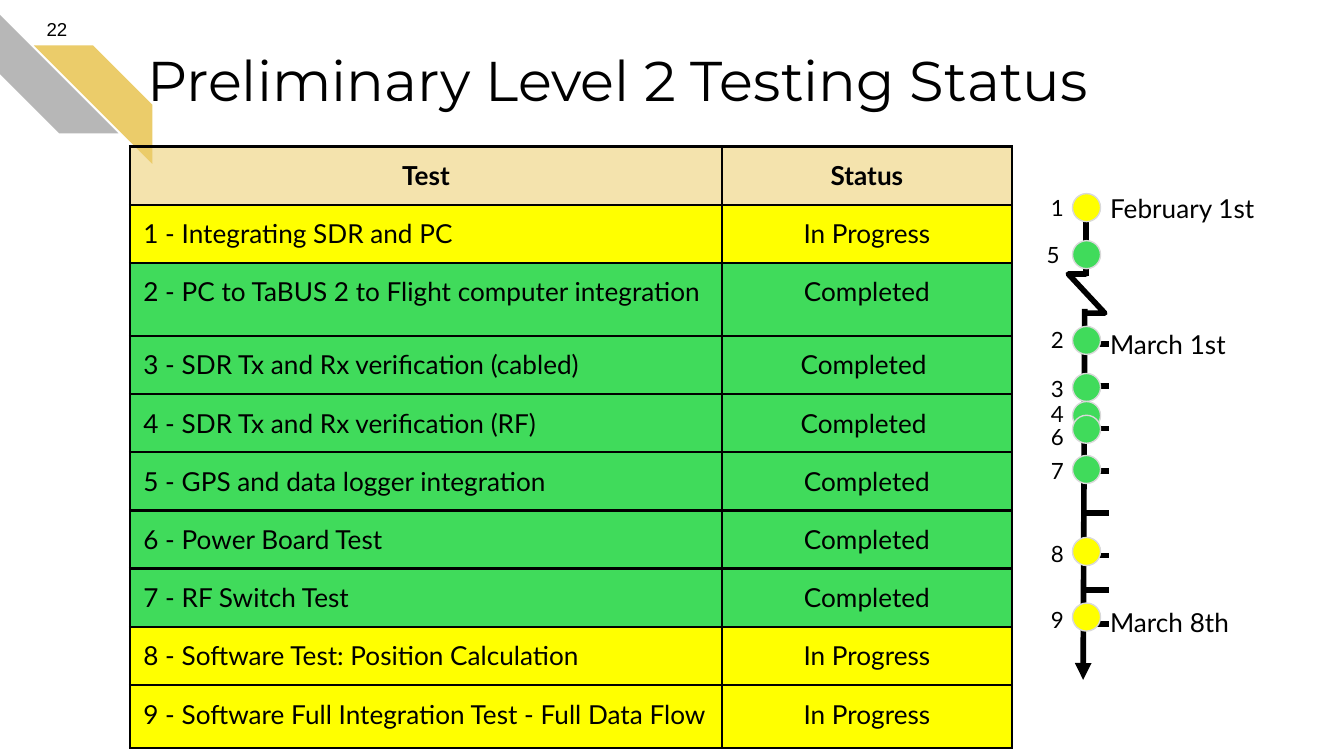
from dataclasses import dataclass

from lxml.etree import SubElement
from pptx import Presentation
from pptx.dml.color import RGBColor
from pptx.enum.shapes import MSO_CONNECTOR, MSO_SHAPE
from pptx.enum.text import MSO_ANCHOR, PP_ALIGN
from pptx.oxml.ns import qn
from pptx.util import Cm, Pt


@dataclass(frozen=True)
class Theme:
    black: str = "000000"
    gray: str = "B7B7B7"
    gold: str = "EBCC6A"
    done: str = "40DB5B"
    active: str = "FFFF00"
    dot_edge: str = "D9D9D9"
    header_alpha: int = 55000
    title_font: str = "Montserrat"
    body_font: str = "Lato"
    page_font: str = "Arial"
    title_size: int = 30
    body_size: int = 14
    label_size: int = 12
    page_size: int = 10
    border_width: float = 1.5
    axis_width: float = 3
    inset: float = 0.25


THEME = Theme()
STATUS_FILLS = {"Completed": THEME.done, "In Progress": THEME.active}

TESTS = [
    ("1 - Integrating SDR and PC", "In Progress"),
    ("2 - PC to TaBUS 2 to Flight computer integration", "Completed"),
    ("3 - SDR Tx and Rx verification (cabled)", "Completed "),
    ("4 - SDR Tx and Rx verification (RF)", "Completed "),
    ("5 - GPS and data logger integration", "Completed"),
    ("6 - Power Board Test", "Completed"),
    ("7 - RF Switch Test", "Completed"),
    ("8 - Software Test: Position Calculation", "In Progress"),
    ("9 - Software Full Integration Test - Full Data Flow", "In Progress"),
]
COLUMN_WIDTHS = [11.18, 5.49]
ROW_HEIGHTS = [1.1, 1.1, 1.38] + [1.1] * 6 + [1.19]

MILESTONES = [
    ("1", 3.66, 19.61, 3.61),
    ("5", 4.55, 19.53, 4.5),
    ("2", 6.17, 19.61, 6.12),
    ("3", 7.06, 19.61, 7.04),
    ("4", 7.59, 19.61, 7.52),
    ("6", 7.85, 19.61, 7.95),
    ("7", 8.61, 19.61, 8.59),
    ("8", 10.16, 19.61, 10.16),
    ("9", 11.4, 19.61, 11.4),
]
DATES = [
    ("February 1st", 3.53, 3.51, 0.79),
    ("March 1st", 6.2, 3.15, 0.61),
    ("March 8th", 11.46, 3, 0.61),
]
TICKS = [6.5 + 0.8 * day for day in range(6)] + [11.15, 11.79]
BREAK_POINTS = [(20.52, 5.92), (20.88, 5.92), (20.19, 5.18), (20.52, 5.18), (20.52, 5.16)]


def color(value):
    return RGBColor.from_string(value)


def format_text(frame, text, font, size, align=PP_ALIGN.LEFT, bold=False):
    frame.text = text
    para = frame.paragraphs[0]
    para.alignment = align
    for span in para.runs:
        span.font.name = font
        span.font.size = Pt(size)
        span.font.bold = bold
        span.font.color.rgb = color(THEME.black)


def set_margins(holder):
    for side in ("left", "top", "right", "bottom"):
        setattr(holder, f"margin_{side}", Cm(THEME.inset))


def add_text(page, text, left, top, width, height, font, size,
             align=PP_ALIGN.LEFT, anchor=MSO_ANCHOR.MIDDLE):
    box = page.shapes.add_textbox(Cm(left), Cm(top), Cm(width), Cm(height))
    frame = box.text_frame
    frame.word_wrap = True
    frame.vertical_anchor = anchor
    set_margins(frame)
    format_text(frame, text, font, size, align)


def add_shape(page, kind, left, top, size, fill):
    shape = page.shapes.add_shape(kind, Cm(left), Cm(top), Cm(size), Cm(size))
    shape.shadow.inherit = False
    shape.fill.solid()
    shape.fill.fore_color.rgb = color(fill)
    shape.line.fill.background()
    return shape


def add_dot(page, top, fill):
    dot = add_shape(page, MSO_SHAPE.OVAL, 20.27, top, 0.53, fill)
    dot.line.color.rgb = color(THEME.dot_edge)
    dot.line.width = Pt(0.75)


def style_axis(line):
    line.color.rgb = color(THEME.black)
    line.width = Pt(THEME.axis_width)


def add_line(page, start, end, arrow=False):
    connector = page.shapes.add_connector(
        MSO_CONNECTOR.STRAIGHT, Cm(start[0]), Cm(start[1]), Cm(end[0]), Cm(end[1]))
    style_axis(connector.line)
    properties = connector._element.spPr
    if arrow:
        SubElement(properties.find(qn("a:ln")), qn("a:tailEnd"), type="triangle")
    SubElement(properties, qn("a:effectLst"))


def add_axis_break(page):
    points = [(Cm(x), Cm(y)) for x, y in BREAK_POINTS]
    builder = page.shapes.build_freeform(*points[0])
    builder.add_line_segments(points[1:], close=False)
    zigzag = builder.convert_to_shape()
    zigzag.shadow.inherit = False
    zigzag.fill.background()
    style_axis(zigzag.line)


def add_borders(cell):
    properties = cell._tc.get_or_add_tcPr()
    for side in ("lnL", "lnR", "lnT", "lnB"):
        border = SubElement(properties, qn(f"a:{side}"), w=str(Pt(THEME.border_width)))
        fill = SubElement(border, qn("a:solidFill"))
        SubElement(fill, qn("a:srgbClr"), val=THEME.black)


def style_cell(cell, text, fill, align, bold):
    set_margins(cell)
    add_borders(cell)
    cell.fill.solid()
    cell.fill.fore_color.rgb = color(fill)
    format_text(cell.text_frame, text, THEME.body_font, THEME.body_size, align, bold)


def add_status_table(page):
    rows = [("Test", "Status")] + TESTS
    table = page.shapes.add_table(
        len(rows), len(COLUMN_WIDTHS), Cm(2.46), Cm(2.77),
        Cm(sum(COLUMN_WIDTHS)), Cm(sum(ROW_HEIGHTS))).table
    for column, width in zip(table.columns, COLUMN_WIDTHS):
        column.width = Cm(width)
    for row, height in zip(table.rows, ROW_HEIGHTS):
        row.height = Cm(height)
    for row_index, values in enumerate(rows):
        header = row_index == 0
        fill = THEME.gold if header else STATUS_FILLS[values[1].strip()]
        for column_index, text in enumerate(values):
            cell = table.cell(row_index, column_index)
            centered = header or column_index == 1
            align = PP_ALIGN.CENTER if centered else PP_ALIGN.LEFT
            style_cell(cell, text, fill, align, header)
            if header:
                shade = cell._tc.tcPr.find(qn("a:solidFill")).find(qn("a:srgbClr"))
                SubElement(shade, qn("a:alpha"), val=str(THEME.header_alpha))


def add_timeline(page):
    for tick in TICKS:
        add_line(page, (20.45, tick), (20.96, tick))
    add_line(page, (20.5, 5.84), (20.47, 12.85), arrow=True)
    add_line(page, (20.52, 5.21), (20.52, 3.78))
    add_axis_break(page)
    for text, top, width, height in DATES:
        add_text(page, text, 20.73, top, width, height, THEME.body_font, THEME.body_size)
    for number, dot_top, label_left, label_top in MILESTONES:
        status = TESTS[int(number) - 1][1].strip()
        add_dot(page, dot_top, STATUS_FILLS[status])
        add_text(page, number, label_left, label_top, 0.66, 0.61,
                 THEME.body_font, THEME.label_size)


def main():
    deck = Presentation()
    deck.slide_width, deck.slide_height = Cm(25.4), Cm(14.29)
    page = deck.slides.add_slide(deck.slide_layouts[6])
    add_shape(page, MSO_SHAPE.DIAGONAL_STRIPE, 0, 0.28, 2.24, THEME.gray).rotation = 270
    gold_stripe = add_shape(page, MSO_SHAPE.DIAGONAL_STRIPE, 0.64, 0.86, 2.24, THEME.gold)
    gold_stripe._element.spPr.xfrm.set("flipH", "1")
    add_text(page, "Preliminary Level 2 Testing Status", 2.54, 0.61, 19.56, 2.54,
             THEME.title_font, THEME.title_size, anchor=MSO_ANCHOR.TOP)
    add_text(page, "22", 0, 0, 1.52, 1.09, THEME.page_font, THEME.page_size, PP_ALIGN.RIGHT)
    add_status_table(page)
    add_timeline(page)
    deck.save("out.pptx")


if __name__ == "__main__":
    main()
